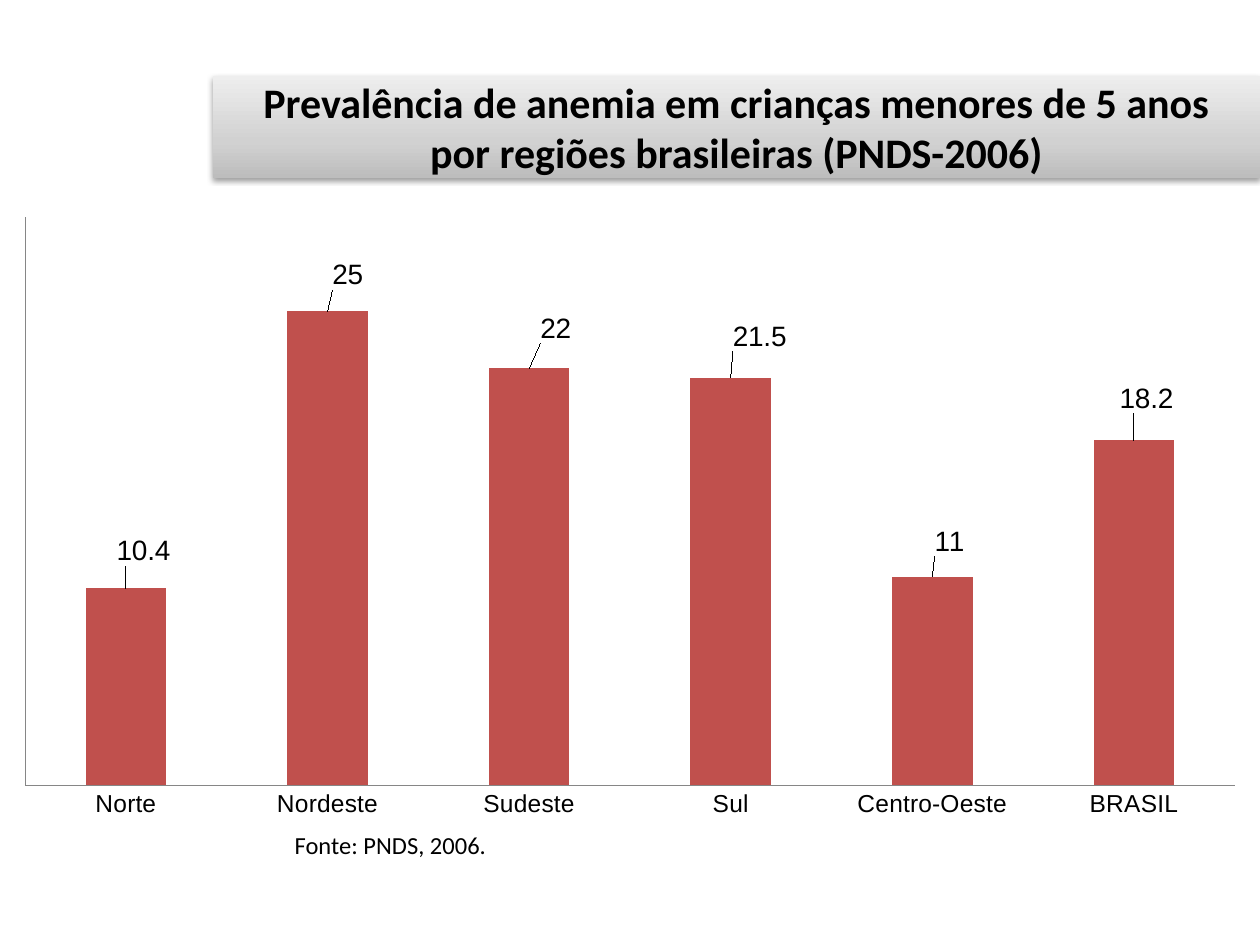
from lxml import etree
from pptx import Presentation
from pptx.chart.data import CategoryChartData
from pptx.dml.color import RGBColor
from pptx.enum.chart import XL_CHART_TYPE, XL_LABEL_POSITION, XL_TICK_LABEL_POSITION, XL_TICK_MARK
from pptx.enum.text import MSO_ANCHOR, MSO_AUTO_SIZE, PP_ALIGN
from pptx.oxml import parse_xml
from pptx.oxml.ns import nsdecls, qn
from pptx.util import Inches, Pt

COLORS = {"text": "000000", "bar": "C0504D", "axis": "868686",
          "band_bottom": "BDBDBD", "band_middle": "D1D1D1", "band_top": "EEEEEE"}

# Region, prevalence, label shift as fractions of the chart's width and height
REGIONS = [
    ("Norte", 10.4, 0.014, -0.027),
    ("Nordeste", 25, 0.016, -0.026),
    ("Sudeste", 22, 0.021, -0.032),
    ("Sul", 21.5, 0.023, -0.034),
    ("Centro-Oeste", 11, 0.014, -0.024),
    ("BRASIL", 18.2, 0.01, -0.035),
]


def color(name):
    return RGBColor.from_string(COLORS[name])


def set_font(font, name, size, bold=False):
    font.name, font.size, font.bold = name, Pt(size), bold
    font.color.rgb = color("text")


def place(shape, box):
    shape.left, shape.top, shape.width, shape.height = (Inches(length) for length in box)


def manual_layout(**settings):
    """Build a c:layout element from manual layout settings."""
    layout = parse_xml(f"<c:layout {nsdecls('c')}><c:manualLayout/></c:layout>")
    for tag, value in settings.items():
        etree.SubElement(layout[0], qn(f"c:{tag}")).set("val", str(value))
    return layout


def add_title(slide, box):
    title = slide.shapes.title
    place(title, box)
    # Grey gradient band with a soft shadow below
    stops = "".join(
        f'<a:gs pos="{position * 1000}"><a:srgbClr val="{COLORS[name]}"/></a:gs>'
        for position, name in ((0, "band_bottom"), (35, "band_middle"), (100, "band_top")))
    properties = title._element.spPr
    properties.append(parse_xml(
        f'<a:gradFill {nsdecls("a")} rotWithShape="1"><a:gsLst>{stops}</a:gsLst>'
        '<a:lin ang="16200000" scaled="0"/></a:gradFill>'))
    properties.append(parse_xml(
        f'<a:effectLst {nsdecls("a")}><a:outerShdw blurRad="40000" dist="20000" dir="5400000" '
        'rotWithShape="0"><a:srgbClr val="000000"><a:alpha val="38000"/></a:srgbClr>'
        '</a:outerShdw></a:effectLst>'))
    frame = title.text_frame
    frame.auto_size = MSO_AUTO_SIZE.NONE
    frame.word_wrap = True
    frame.vertical_anchor = MSO_ANCHOR.MIDDLE
    frame.text = "Prevalência de anemia em crianças menores de 5 anos\vpor regiões brasileiras (PNDS-2006)"
    paragraph = frame.paragraphs[0]
    paragraph.alignment = PP_ALIGN.CENTER
    paragraph.line_spacing = 1.0
    set_font(paragraph.font, "Calibri", 24, bold=True)


def add_prevalence_chart(slide, box):
    data = CategoryChartData()
    data.categories = [region[0] for region in REGIONS]
    data.add_series("Series 1", [region[1] for region in REGIONS])
    chart = slide.shapes.add_chart(
        XL_CHART_TYPE.COLUMN_CLUSTERED, *(Inches(length) for length in box), data).chart
    chart.has_legend = False
    chart.has_title = False
    set_font(chart.font, "Calibri", 18)

    # Axes
    for axis in (chart.category_axis, chart.value_axis):
        axis.major_tick_mark = axis.minor_tick_mark = XL_TICK_MARK.NONE
        axis.has_major_gridlines = False
        axis.format.line.color.rgb = color("axis")
        axis.format.line.width = Pt(0.75)
    set_font(chart.category_axis.tick_labels.font, "Arial", 14)
    chart.value_axis.tick_label_position = XL_TICK_LABEL_POSITION.NONE
    chart.value_axis.minimum_scale = 0
    chart.value_axis.maximum_scale = 30

    # Columns
    plot = chart.plots[0]
    plot.gap_width = 150
    plot.vary_by_categories = False
    series = plot.series[0]
    series.format.fill.solid()
    series.format.fill.fore_color.rgb = color("bar")

    # Value labels, each moved a little from its default place
    for index in range(len(REGIONS)):
        label = series.points[index].data_label
        set_font(label.font, "Arial", 16)
        label.position = XL_LABEL_POSITION.OUTSIDE_END
    for element, (_, _, x, y) in zip(series._element.iter(qn("c:dLbl")), REGIONS):
        element.find(qn("c:idx")).addnext(manual_layout(x=x, y=y))

    # Plot area
    plot_area = chart._chartSpace.chart.plotArea
    for old_layout in plot_area.findall(qn("c:layout")):
        plot_area.remove(old_layout)
    plot_area.insert(0, manual_layout(
        layoutTarget="inner", xMode="edge", yMode="edge", x=0.02, y=0.02, w=0.96, h=0.91))


def add_source_note(slide, box):
    note = slide.shapes.add_textbox(*(Inches(length) for length in box))
    frame = note.text_frame
    frame.word_wrap = True
    frame.auto_size = MSO_AUTO_SIZE.SHAPE_TO_FIT_TEXT
    frame.text = "Fonte: PNDS, 2006."
    set_font(frame.paragraphs[0].font, "Calibri", 14)


def main():
    presentation = Presentation()
    presentation.slide_width, presentation.slide_height = Inches(10), Inches(7.5)
    slide = presentation.slides.add_slide(presentation.slide_layouts[5])
    add_prevalence_chart(slide, (0, 1.62, 10, 4.96))
    add_title(slide, (1.69, 0.6, 8.31, 0.81))
    add_source_note(slide, (2.24, 6.54, 1.89, 0.34))
    presentation.save("out.pptx")


if __name__ == "__main__":
    main()
